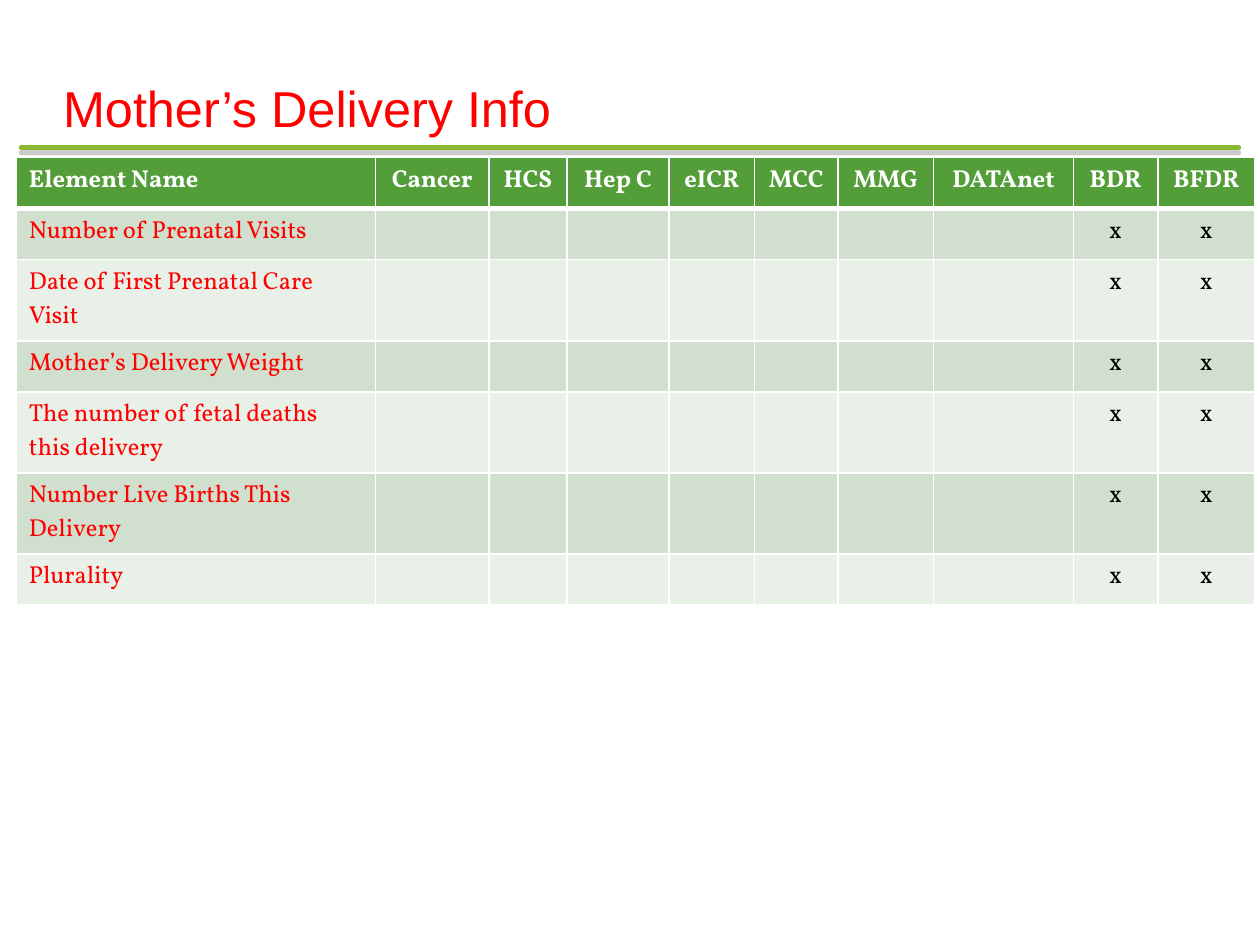
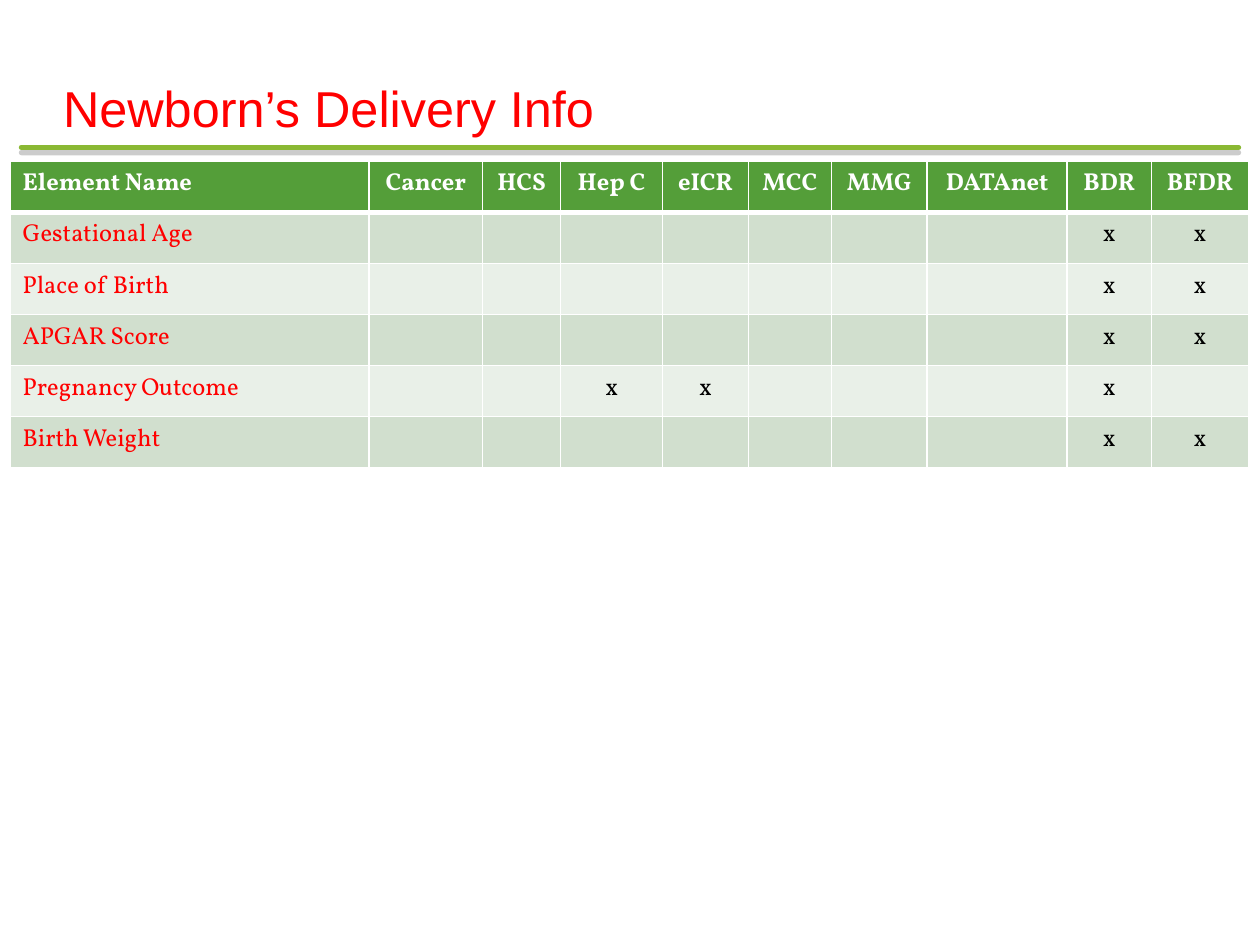
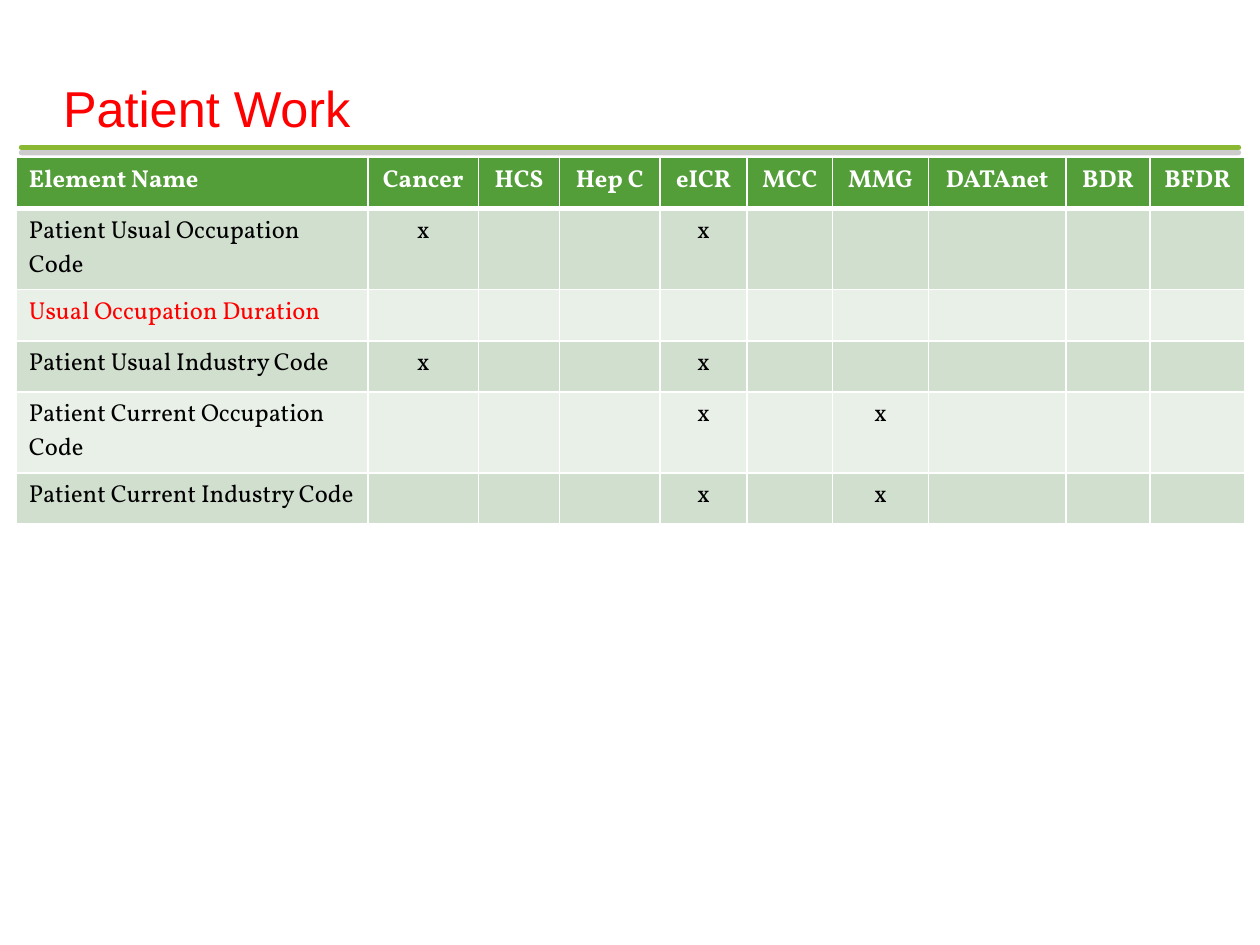
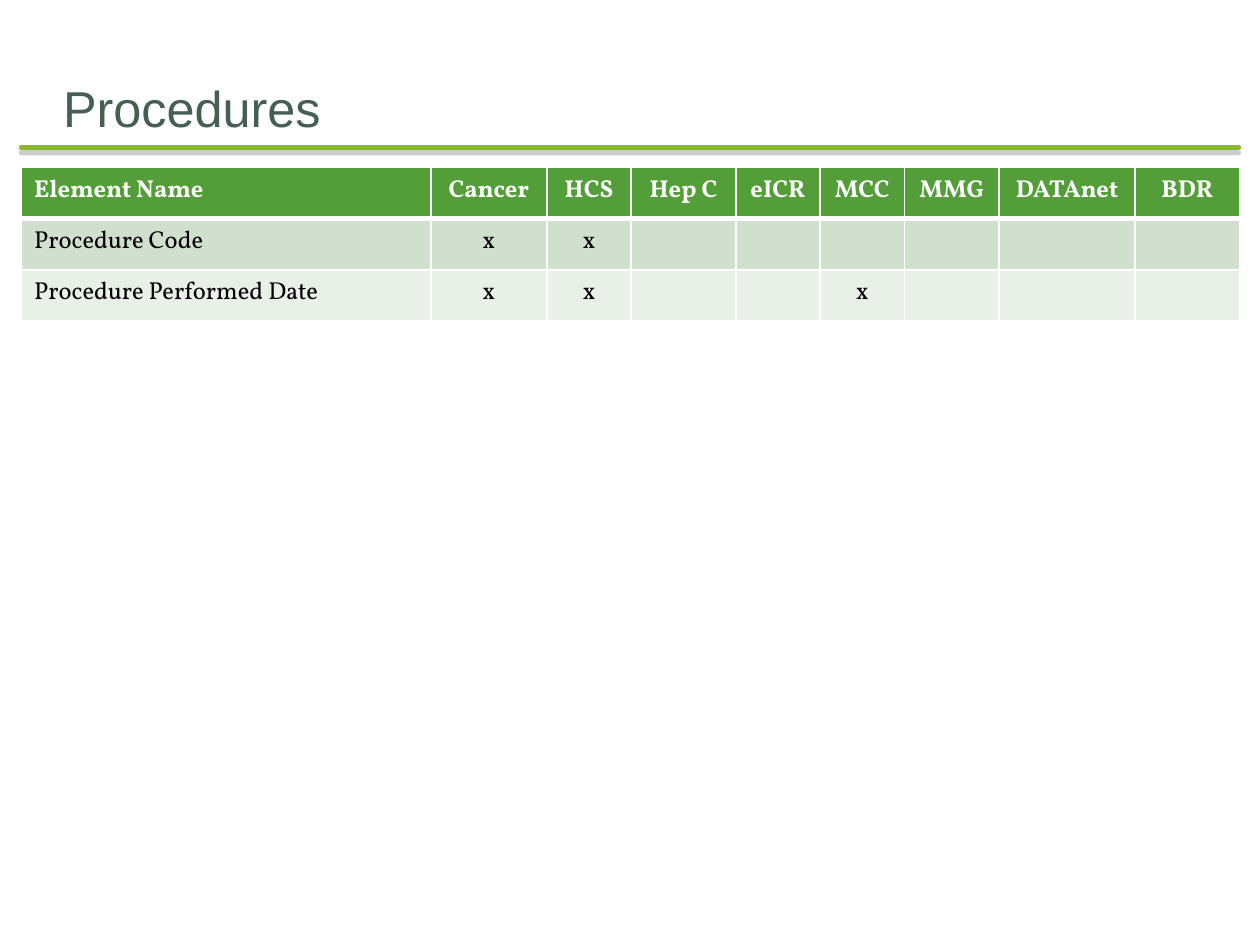
import pptx
import pptx.dml.color
import pptx.enum.shapes
import pptx.enum.text
import pptx.oxml
import pptx.oxml.ns
import pptx.util
from pptx.util import Inches

RED, BLACK, WHITE, SLATE = "FF0000", "000000", "FFFFFF", "455F51"
HEADER_GREEN, RULE_GREEN, SHADOW_GRAY = "549E39", "8AB833", "808080"
BAND_FILLS = ("D1DFCE", "E9F0E8")
TITLE_FONT, TABLE_FONT = "Arial", "Vollkorn"
TITLE_ONLY = 5
ROW_HEIGHT = pptx.util.Pt(29.2)

SOURCES = ["Cancer", "HCS", "Hep C", "eICR", "MCC", "MMG", "DATAnet", "BDR", "BFDR"]
DELIVERY_WIDTHS = [2.85, 0.9, 0.62, 0.81, 0.68, 0.66, 0.76, 1.11, 0.67, 0.77]
BIRTH_REPORTS = ["BDR", "BFDR"]

# Each row holds the element name, its colour and the sources that carry it.
SLIDES = [
    {
        "title": "Mother’s Delivery Info",
        "title_color": RED,
        "table_at": (0.13, 1.25),
        "widths": DELIVERY_WIDTHS,
        "rows": [
            ("Number of Prenatal Visits", RED, BIRTH_REPORTS),
            ("Date of First Prenatal Care Visit", RED, BIRTH_REPORTS),
            ("Mother’s Delivery Weight", RED, BIRTH_REPORTS),
            ("The number of fetal deaths this delivery", RED, BIRTH_REPORTS),
            ("Number Live Births This Delivery", RED, BIRTH_REPORTS),
            ("Plurality", RED, BIRTH_REPORTS),
        ],
    },
    {
        "title": "Newborn’s Delivery Info",
        "title_color": RED,
        "table_at": (0.08, 1.28),
        "widths": DELIVERY_WIDTHS,
        "rows": [
            ("Gestational Age", RED, BIRTH_REPORTS),
            ("Place of Birth", RED, BIRTH_REPORTS),
            ("APGAR Score", RED, BIRTH_REPORTS),
            ("Pregnancy Outcome", RED, ["Hep C", "eICR", "BDR"]),
            ("Birth Weight", RED, BIRTH_REPORTS),
        ],
    },
    {
        "title": "Patient Work",
        "title_color": RED,
        "table_at": (0.13, 1.25),
        "widths": [2.79, 0.88, 0.64, 0.8, 0.69, 0.68, 0.76, 1.09, 0.67, 0.75],
        "rows": [
            ("Patient Usual Occupation Code", BLACK, ["Cancer", "eICR"]),
            ("Usual Occupation Duration", RED, []),
            ("Patient Usual Industry Code", BLACK, ["Cancer", "eICR"]),
            ("Patient Current Occupation Code", BLACK, ["eICR", "MMG"]),
            ("Patient Current Industry Code", BLACK, ["eICR", "MMG"]),
        ],
    },
    {
        "title": "Procedures",
        "title_color": SLATE,
        "table_at": (0.17, 1.33),
        "widths": [3.25, 0.92, 0.67, 0.83, 0.67, 0.67, 0.75, 1.08, 0.83],
        "rows": [
            ("Procedure Code", BLACK, ["Cancer", "HCS"]),
            ("Procedure Performed Date", BLACK, ["Cancer", "HCS", "MCC"]),
        ],
    },
]


def rgb(color):
    return pptx.dml.color.RGBColor.from_string(color)


def xml(markup):
    """Parse one DrawingML element, with the a: namespace declared on it."""
    tag, rest = markup.split(" ", 1)
    return pptx.oxml.parse_xml(f"{tag} {pptx.oxml.ns.nsdecls('a')} {rest}")


def write_text(text_frame, text, font, size, color, bold=False, centered=False):
    paragraph = text_frame.paragraphs[0]
    alignments = pptx.enum.text.PP_ALIGN
    paragraph.alignment = alignments.CENTER if centered else alignments.LEFT
    run = paragraph.add_run()
    run.text = text
    run.font.name = font
    run.font.size = pptx.util.Pt(size)
    run.font.bold = bold
    run.font.color.rgb = rgb(color)


def add_title_rule(slide):
    rule = slide.shapes.add_connector(
        pptx.enum.shapes.MSO_CONNECTOR.STRAIGHT,
        Inches(0.17), Inches(1.17), Inches(9.83), Inches(1.17))
    rule.line.color.rgb = rgb(RULE_GREEN)
    rule.line.width = pptx.util.Pt(3)
    rule.line._get_or_add_ln().set("cap", "rnd")
    rule.element.spPr.append(xml(
        f'<a:effectLst ><a:outerShdw blurRad="0" dist="{pptx.util.Pt(3)}" dir="5400000" '
        f'algn="ctr" rotWithShape="0"><a:srgbClr val="{SHADOW_GRAY}">'
        '<a:alpha val="40000"/></a:srgbClr></a:outerShdw></a:effectLst>'))


def set_title(slide, text, color):
    title = slide.shapes.title
    title.left, title.top = Inches(0.5), Inches(0.5)
    title.width, title.height = Inches(9), Inches(0.59)
    frame = title.text_frame
    frame.auto_size = pptx.enum.text.MSO_AUTO_SIZE.NONE
    frame.vertical_anchor = pptx.enum.text.MSO_ANCHOR.BOTTOM
    frame.margin_left = frame.margin_right = frame.margin_bottom = 0
    frame.margin_top = Inches(0.05)
    write_text(frame, text, TITLE_FONT, 28.8, color)


def set_borders(cell, top=1, bottom=1):
    properties = cell._tc.get_or_add_tcPr()
    widths = {"lnL": 1, "lnR": 1, "lnT": top, "lnB": bottom}
    for position, (side, width) in enumerate(widths.items()):
        properties.insert(position, xml(
            f'<a:{side} w="{pptx.util.Pt(width)}"><a:solidFill>'
            f'<a:srgbClr val="{WHITE}"/></a:solidFill></a:{side}>'))


def add_element_table(slide, left, top, widths, rows):
    sources = SOURCES[:len(widths) - 1]
    lines = [["Element Name"] + sources]
    lines += [[name] + ["x" if source in marked else "" for source in sources]
              for name, _, marked in rows]
    table = slide.shapes.add_table(
        len(lines), len(widths), Inches(left), Inches(top),
        Inches(sum(widths)), ROW_HEIGHT * len(lines)).table
    table.horz_banding = False
    for column, width in zip(table.columns, widths):
        column.width = Inches(width)

    for row_index, line in enumerate(lines):
        is_header = row_index == 0
        table.rows[row_index].height = ROW_HEIGHT
        fill = HEADER_GREEN if is_header else BAND_FILLS[(row_index - 1) % 2]
        name_color = WHITE if is_header else rows[row_index - 1][1]
        mark_color = WHITE if is_header else BLACK
        for column_index, text in enumerate(line):
            cell = table.cell(row_index, column_index)
            cell.fill.solid()
            cell.fill.fore_color.rgb = rgb(fill)
            set_borders(cell, top=3 if row_index == 1 else 1, bottom=3 if is_header else 1)
            if text:
                write_text(cell.text_frame, text, TABLE_FONT, 14,
                           mark_color if column_index else name_color,
                           bold=is_header, centered=column_index > 0)


def main():
    presentation = pptx.Presentation()
    presentation.slide_width, presentation.slide_height = Inches(10), Inches(7.5)
    layout = presentation.slide_layouts[TITLE_ONLY]
    for content in SLIDES:
        slide = presentation.slides.add_slide(layout)
        add_title_rule(slide)
        set_title(slide, content["title"], content["title_color"])
        add_element_table(slide, *content["table_at"], content["widths"], content["rows"])
    presentation.save("out.pptx")


if __name__ == "__main__":
    main()
